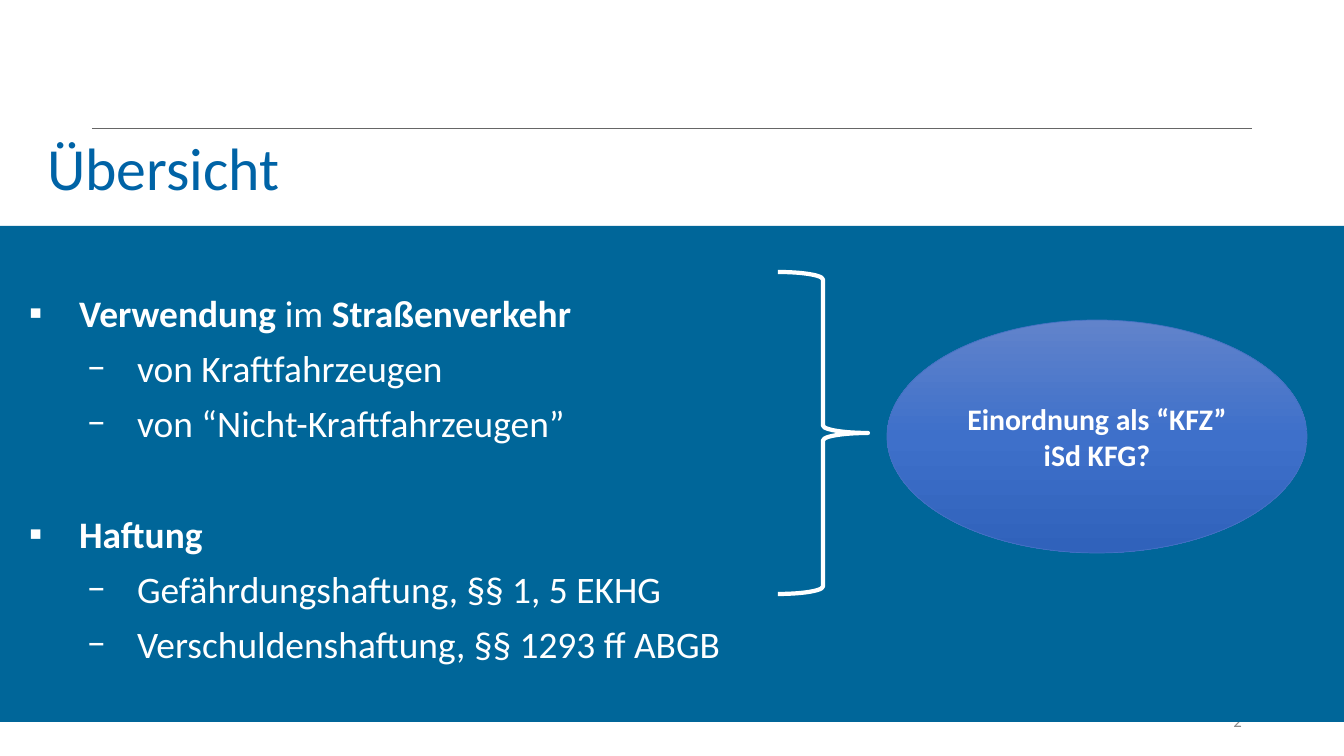
from copy import deepcopy

from lxml import etree
from pptx import Presentation, util as u
from pptx.dml.color import RGBColor
from pptx.enum import shapes, text
from pptx.oxml.ns import qn

WHITE = "FFFFFF"
BLUE = "006699"
TITLE_BLUE = "0063A6"
ACCENT = "4472C4"
RULE_GREY = "666666"
NUMBER_GREY = "8C8C8C"


def px(length):
    return u.Emu(round(length * 12192000 / 1344))


def rgb(value):
    return RGBColor.from_string(value)


class SlideBuilder:
    font = "Calibri"
    bullets = (("▪", 50), ("−", 108))
    hanging = 50

    def __init__(self, presentation):
        self.slide = presentation.slides.add_slide(presentation.slide_layouts[1])
        self.shapes = self.slide.shapes

    def add_run(self, paragraph, content, size, color, bold=False):
        run = paragraph.add_run()
        run.text = content
        run.font.name = self.font
        run.font.size = u.Pt(size)
        run.font.bold = bold
        run.font.color.rgb = rgb(color)

    def place(self, shape, box, anchor):
        shape.left, shape.top, shape.width, shape.height = map(px, box)
        frame = shape.text_frame
        frame.word_wrap = True
        frame.auto_size = text.MSO_AUTO_SIZE.NONE
        frame.vertical_anchor = anchor
        return frame

    def title(self, box, content, size):
        frame = self.place(self.shapes.title, box, text.MSO_ANCHOR.TOP)
        paragraph = frame.paragraphs[0]
        paragraph.alignment = text.PP_ALIGN.LEFT
        paragraph.line_spacing = 0.8
        self.add_run(paragraph, content, size, TITLE_BLUE)

    def bullet(self, paragraph, level):
        character, margin = self.bullets[level]
        properties = paragraph._p.get_or_add_pPr()
        properties.set("marL", str(px(margin)))
        properties.set("indent", str(-px(self.hanging)))
        color = etree.SubElement(properties, qn("a:buClr"))
        etree.SubElement(color, qn("a:srgbClr"), val=WHITE)
        etree.SubElement(properties, qn("a:buFont"), typeface=self.font)
        etree.SubElement(properties, qn("a:buChar"), char=character)

    def outline(self, box, items, size):
        body = self.slide.placeholders[1]
        body.element.getparent().append(body.element)
        frame = self.place(body, box, text.MSO_ANCHOR.TOP)
        for index, (level, space_before, runs) in enumerate(items):
            paragraph = frame.add_paragraph() if index else frame.paragraphs[0]
            paragraph.level = level
            paragraph.alignment = text.PP_ALIGN.LEFT
            paragraph.space_before = u.Pt(space_before)
            paragraph.space_after = u.Pt(7.3)
            self.bullet(paragraph, level)
            for content, bold in runs:
                self.add_run(paragraph, content, size, WHITE, bold)

    def label(self, box, content, size, color):
        frame = self.place(self.shapes.add_textbox(0, 0, 0, 0), box, text.MSO_ANCHOR.MIDDLE)
        frame.paragraphs[0].alignment = text.PP_ALIGN.RIGHT
        self.add_run(frame.paragraphs[0], content, size, color)

    def rule(self, left, right, top, color, width):
        line = self.shapes.add_connector(
            shapes.MSO_CONNECTOR.STRAIGHT, px(left), px(top), px(right), px(top))
        line.line.color.rgb = rgb(color)
        line.line.width = u.Pt(width)
        etree.SubElement(line.element.spPr, qn("a:effectLst"))

    def shape(self, kind, box, fill=None, line=None, width=0):
        shape = self.shapes.add_shape(kind, *map(px, box))
        shape.shadow.inherit = False
        if fill:
            shape.fill.solid()
            shape.fill.fore_color.rgb = rgb(fill)
        else:
            shape.fill.background()
        if line:
            shape.line.color.rgb = rgb(line)
            shape.line.width = u.Pt(width)
        else:
            shape.line.fill.background()
        return shape

    def bubble(self, box, colors, content, size):
        shape = self.shape(shapes.MSO_SHAPE.OVAL, box, line=ACCENT, width=0.5)
        shape.fill.gradient()
        shape.fill.gradient_angle = 270
        stop_list = shape.element.find(".//" + qn("a:gsLst"))
        stop_list.insert(1, deepcopy(stop_list[0]))
        for index, (stop, color) in enumerate(zip(shape.fill.gradient_stops, colors)):
            stop.position = index / 2
            stop.color.rgb = rgb(color)
        frame = self.place(shape, box, text.MSO_ANCHOR.MIDDLE)
        frame.paragraphs[0].alignment = text.PP_ALIGN.CENTER
        self.add_run(frame.paragraphs[0], content, size, WHITE, True)


def main():
    presentation = Presentation()
    presentation.slide_width, presentation.slide_height = px(1344), px(756)
    builder = SlideBuilder(presentation)
    builder.rule(92, 1252, 129, RULE_GREY, 0.75)
    builder.label((950, 701, 302, 40), "2", 12, NUMBER_GREY)
    builder.title((37, 140, 925, 80), "Übersicht", 42.7)
    builder.shape(shapes.MSO_SHAPE.RECTANGLE, (0, 226, 1344, 496), fill=BLUE)
    builder.outline((19, 285, 1325, 452), [
        (0, 0, [("Verwendung ", True), ("im ", False), ("Straßenverkehr", True)]),
        (1, 0, [("von Kraftfahrzeugen", False)]),
        (1, 0, [("von “Nicht-Kraftfahrzeugen”", False)]),
        (0, 39.9, [("Haftung", True)]),
        (1, 0, [("Gefährdungshaftung, §§ 1, 5 EKHG", False)]),
        (1, 0, [("Verschuldenshaftung, §§ 1293 ff ABGB", False)]),
    ], 26.7)
    builder.shape(shapes.MSO_SHAPE.RIGHT_BRACE, (778, 272, 90, 322), line=WHITE, width=3)
    builder.bubble((887, 320, 420, 233), ("6183CB", "3E70CA", "3062BB"),
                   "Einordnung als “KFZ” iSd KFG?", 21.3)
    presentation.save("out.pptx")


if __name__ == "__main__":
    main()
